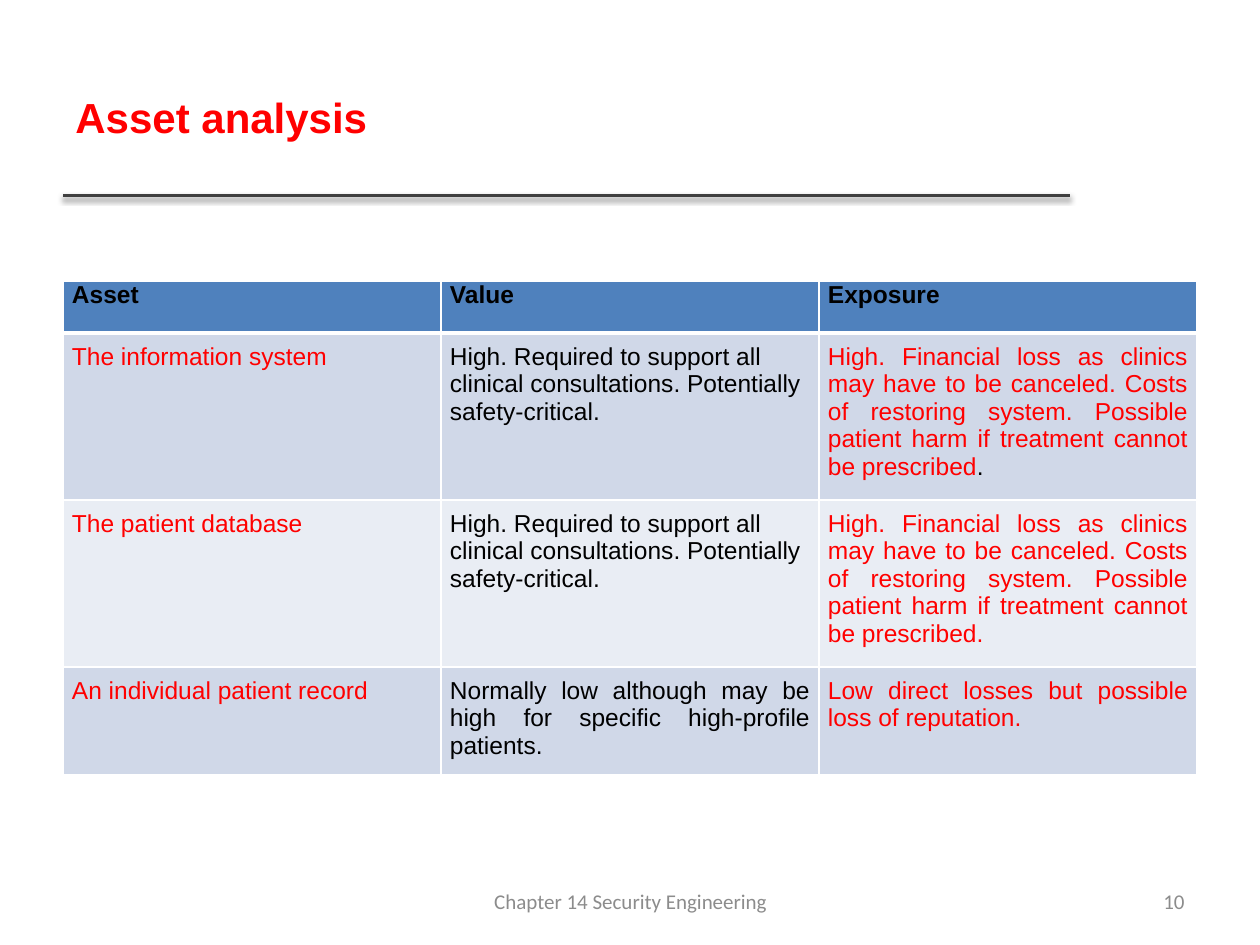
from lxml import etree
from pptx import Presentation, util as u
from pptx.dml.color import RGBColor
from pptx.enum import shapes, text
from pptx.oxml import parse_xml
from pptx.oxml.ns import nsdecls

THEME = {
    "red": "FF0000", "black": "000000", "grey": "8C8C8C", "rule": "404040",
    "border": "FFFFFF", "header": "4F81BD", "bands": ("D0D8E8", "E9EDF4"),
    "title": {"name": "Arial", "size": u.Pt(24), "bold": True},
    "heading": {"name": "Arial", "size": u.Pt(14), "bold": True},
    "body": {"name": "Arial", "size": u.Pt(14), "bold": False},
    "footer": {"name": "Calibri", "size": u.Pt(12), "bold": False},
}
LEFT, JUSTIFY = text.PP_ALIGN.LEFT, text.PP_ALIGN.JUSTIFY
CENTER, RIGHT = text.PP_ALIGN.CENTER, text.PP_ALIGN.RIGHT

SUPPORT = "High. Required to support all clinical consultations. Potentially safety-critical."
LOSS = ("High. Financial loss as clinics may have to be canceled. Costs of restoring system. "
        "Possible patient harm if treatment cannot be prescribed")

# Each cell: alignment, then (wording, colour) runs.
HEADINGS = ["Asset", "Value", "Exposure"]
ASSETS = [
    [(JUSTIFY, [("The information system", "red")]),
     (LEFT, [(SUPPORT, "black")]),
     (JUSTIFY, [(LOSS, "red"), (".", "black")])],
    [(JUSTIFY, [("The patient database", "red")]),
     (LEFT, [(SUPPORT, "black")]),
     (JUSTIFY, [(LOSS + ".", "red")])],
    [(JUSTIFY, [("An individual patient record", "red")]),
     (JUSTIFY, [("Normally low although may be high for specific high-profile patients.", "black")]),
     (JUSTIFY, [("Low direct losses but possible loss of reputation.", "red")])],
]
ROW_HEIGHTS = [1.04, 3.15, 3.15, 2.05]
COLUMN_WIDTH = 7.62
MARGIN = 1.27

# Left, top, width, height in cm; style; alignment; wording; colour.
TEXT_BOXES = [
    ((MARGIN, 0.76, 20.27, 3.18), "title", LEFT, "Asset analysis", "red"),
    ((8.69, 17.65, 8.05, 1.02), "footer", CENTER, "Chapter 14 Security Engineering", "grey"),
    ((18.21, 17.65, 5.92, 1.02), "footer", RIGHT, "10", "grey"),
]


def set_values(target, values):
    for name, value in values.items():
        setattr(target, name, value)


def write(paragraph, style, alignment, runs):
    paragraph.alignment = alignment
    for wording, colour in runs:
        run = paragraph.add_run()
        run.text = wording
        set_values(run.font, THEME[style])
        run.font.color.rgb = RGBColor.from_string(THEME[colour])


def add_text_box(slide, place, style, alignment, wording, colour):
    frame = slide.shapes.add_textbox(*map(u.Cm, place)).text_frame
    set_values(frame, {"word_wrap": True, "vertical_anchor": text.MSO_ANCHOR.MIDDLE})
    write(frame.paragraphs[0], style, alignment, [(wording, colour)])


def add_title_rule(slide):
    rule = slide.shapes.add_connector(
        shapes.MSO_CONNECTOR.STRAIGHT, *map(u.Cm, (MARGIN, 3.94, 21.56, 3.94)))
    rule.line.width = u.Pt(2)
    rule.line.color.rgb = RGBColor.from_string(THEME["rule"])
    rule._element.spPr.append(parse_xml(
        f'<a:effectLst {nsdecls("a")}><a:outerShdw blurRad="{u.Pt(3.1)}" dist="{u.Pt(1.6)}" '
        f'dir="5400000" rotWithShape="0"><a:srgbClr val="{THEME["black"]}">'
        '<a:alpha val="38000"/></a:srgbClr></a:outerShdw></a:effectLst>'))


def format_cell(cell, fill, padding, widths):
    """Set margins, borders (points by side) and fill; borders precede the fill in the XML."""
    side, end = u.Cm(0.18), u.Cm(padding)
    set_values(cell, {"margin_left": side, "margin_right": side,
                      "margin_top": end, "margin_bottom": end})
    properties = cell._tc.get_or_add_tcPr()
    for edge in "LRTB":
        properties.append(parse_xml(
            f'<a:ln{edge} {nsdecls("a")} w="{u.Pt(widths.get(edge, 1))}"><a:solidFill>'
            f'<a:srgbClr val="{THEME["border"]}"/></a:solidFill></a:ln{edge}>'))
    cell.fill.solid()
    cell.fill.fore_color.rgb = RGBColor.from_string(fill)


def add_asset_table(slide):
    columns = len(HEADINGS)
    table = slide.shapes.add_table(
        len(ROW_HEIGHTS), columns, u.Cm(MARGIN), u.Cm(5.67),
        u.Cm(COLUMN_WIDTH * columns), u.Cm(sum(ROW_HEIGHTS))).table
    for column in table.columns:
        column.width = u.Cm(COLUMN_WIDTH)
    for row, height in zip(table.rows, ROW_HEIGHTS):
        row.height = u.Cm(height)

    for index, heading in enumerate(HEADINGS):
        cell = table.cell(0, index)
        format_cell(cell, THEME["header"], 0, {"B": 3})
        paragraph = cell.text_frame.paragraphs[0]
        write(paragraph, "heading", JUSTIFY, [(heading, "black")])
        set_values(paragraph._p.get_or_add_pPr(), {"marL": 0, "indent": u.Cm(0.97)})

    for row, asset in enumerate(ASSETS, start=1):
        for index, (alignment, runs) in enumerate(asset):
            cell = table.cell(row, index)
            format_cell(cell, THEME["bands"][(row - 1) % 2], 0.2, {"T": 3} if row == 1 else {})
            write(cell.text_frame.paragraphs[0], "body", alignment, runs)


def main():
    presentation = Presentation()
    set_values(presentation, {"slide_width": u.Cm(25.4), "slide_height": u.Cm(19.05)})
    slide = presentation.slides.add_slide(presentation.slide_layouts[6])
    add_title_rule(slide)
    for box in TEXT_BOXES:
        add_text_box(slide, *box)
    add_asset_table(slide)
    presentation.save("out.pptx")


if __name__ == "__main__":
    main()
